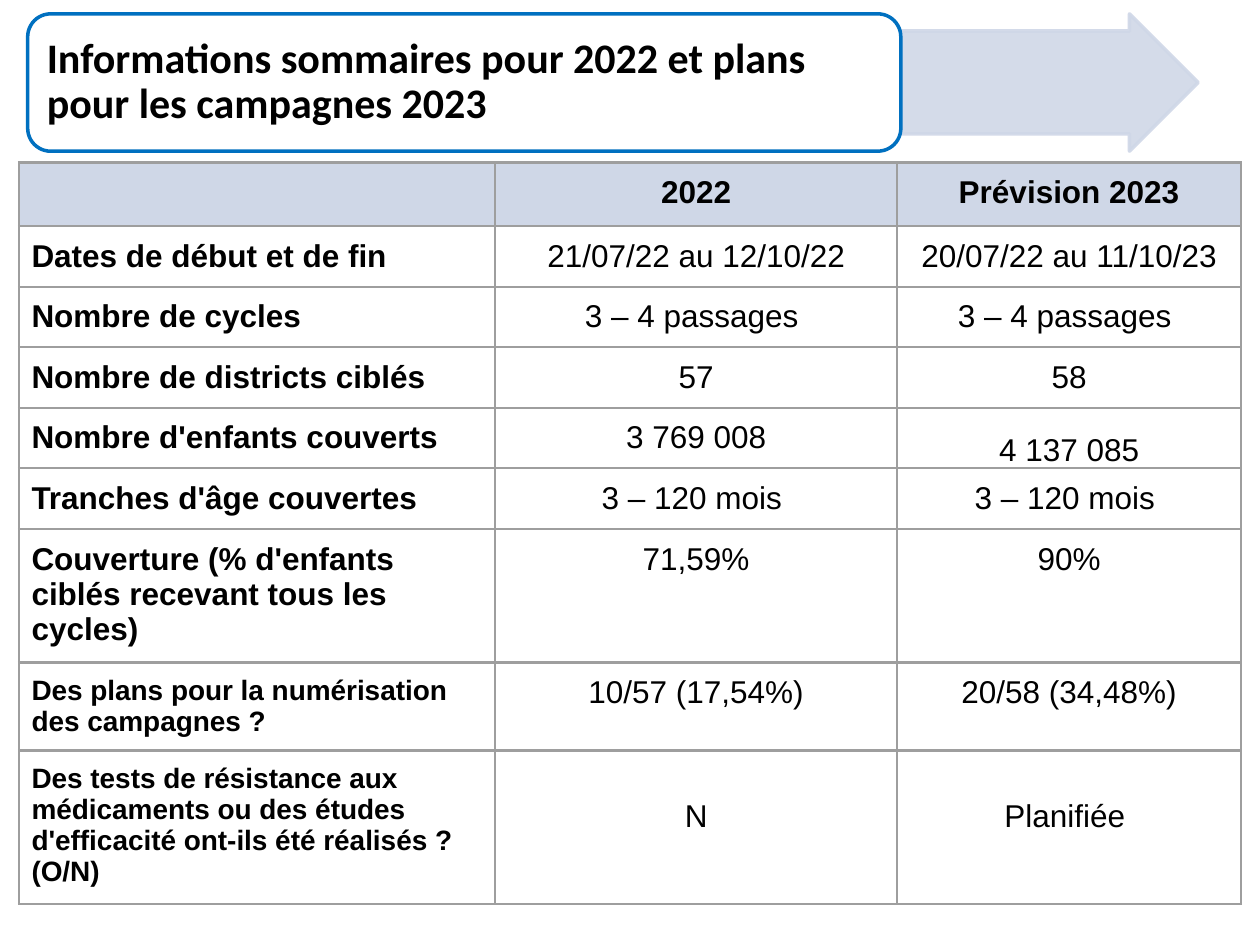
from dataclasses import dataclass
from typing import Any

from lxml import etree
from pptx import Presentation
from pptx.dml.color import RGBColor
from pptx.enum.shapes import MSO_SHAPE
from pptx.enum.text import MSO_ANCHOR, PP_ALIGN
from pptx.oxml.ns import qn
from pptx.util import Inches, Pt

ROUNDED, ARROW = MSO_SHAPE.ROUNDED_RECTANGLE, MSO_SHAPE.RIGHT_ARROW
TOP, MIDDLE, BOTTOM = MSO_ANCHOR.TOP, MSO_ANCHOR.MIDDLE, MSO_ANCHOR.BOTTOM
LEFT, CENTER = PP_ALIGN.LEFT, PP_ALIGN.CENTER


@dataclass(frozen=True)
class Theme:
    black: str = "000000"
    white: str = "FFFFFF"
    blue: str = "0070C0"
    pale: str = "CFD7E7"
    border: str = "9E9E9E"
    title_font: str = "Calibri"
    table_font: str = "Arial"
    title_size: float = 24
    table_size: float = 18
    small_size: float = 16
    outline: float = 2
    border_width: float = 1.5


THEME = Theme()


@dataclass(frozen=True)
class Banner:
    kind: Any
    left: float
    width: float
    adjustments: tuple[float, ...]
    fill: str
    line: str
    opacity: int = 100


@dataclass(frozen=True)
class Row:
    label: str
    current: str
    planned: str
    height: float = 0.48
    label_size: float = THEME.table_size
    header: bool = False
    value_top: float = 0.1
    planned_at_bottom: bool = False


BANNERS = (
    Banner(ARROW, 7.15, 2.36, (0.75, 0.5), THEME.pale, THEME.pale, 89),
    Banner(ROUNDED, 0.22, 6.93, (0.167,), THEME.white, THEME.blue),
)
TITLE = "Informations sommaires pour 2022 et plans pour les campagnes 2023"
COLUMN_WIDTHS = (3.78, 3.19, 2.73)
ROWS = (
    Row("", "2022", "Prévision 2023", header=True),
    Row("Dates de début et de fin", "21/07/22 au 12/10/22", "20/07/22 au 11/10/23"),
    Row("Nombre de cycles", "3 – 4 passages ", "3 – 4 passages "),
    Row("Nombre de districts ciblés", "57", "58"),
    Row("Nombre d'enfants couverts", "3 769 008", "4 137 085", planned_at_bottom=True),
    Row("Tranches d'âge couvertes", "3 – 120 mois ", "3 – 120 mois "),
    Row("Couverture (% d'enfants ciblés recevant tous les cycles)", "71,59%", "90%", 1.06),
    Row("Des plans pour la numérisation des campagnes ?",
        "10/57 (17,54%)", "20/58 (34,48%)", 0.7, THEME.small_size),
    Row("Des tests de résistance aux médicaments ou des études d'efficacité "
        "ont-ils été réalisés ? (O/N)",
        "N", "Planifiée ", 1.22, THEME.small_size, value_top=0.38),
)


def apply_format(target: Any, values: dict[str, Any]) -> None:
    for name, value in values.items():
        setattr(target, name, value)


def write_text(paragraph: Any, text: str, font: str, size: float, bold: bool) -> None:
    run = paragraph.add_run()
    run.text = text
    apply_format(run.font, {"name": font, "size": Pt(size), "bold": bold})
    run.font.color.rgb = RGBColor.from_string(THEME.black)


def set_margins(target: Any, left: float, top: float, right: float, bottom: float) -> None:
    apply_format(target, {
        "margin_left": Inches(left), "margin_top": Inches(top),
        "margin_right": Inches(right), "margin_bottom": Inches(bottom),
    })


def draw_banner(slide: Any, banner: Banner) -> Any:
    shape = slide.shapes.add_shape(
        banner.kind, Inches(banner.left), Inches(0.11), Inches(banner.width), Inches(1.09))
    shape.shadow.inherit = False
    for index, value in enumerate(banner.adjustments):
        shape.adjustments[index] = value
    shape.fill.solid()
    shape.fill.fore_color.rgb = RGBColor.from_string(banner.fill)
    shape.line.color.rgb = RGBColor.from_string(banner.line)
    shape.line.width = Pt(THEME.outline)
    if banner.opacity < 100:
        for color in shape.element.spPr.iter(qn("a:srgbClr")):
            etree.SubElement(color, qn("a:alpha"), val=str(banner.opacity * 1000))
    return shape


def write_title(shape: Any) -> None:
    frame = shape.text_frame
    apply_format(frame, {"word_wrap": True, "vertical_anchor": MIDDLE})
    set_margins(frame, 0.1, 0.05, 0.1, 0.05)
    paragraph = frame.paragraphs[0]
    apply_format(paragraph, {"alignment": LEFT, "line_spacing": 0.9})
    write_text(paragraph, TITLE, THEME.title_font, THEME.title_size, True)


def draw_borders(cell: Any) -> None:
    properties = cell._tc.get_or_add_tcPr()
    for position, side in enumerate(("lnL", "lnR", "lnT", "lnB")):
        line = etree.Element(qn(f"a:{side}"), w=str(Pt(THEME.border_width)))
        fill = etree.SubElement(line, qn("a:solidFill"))
        etree.SubElement(fill, qn("a:srgbClr"), val=THEME.border)
        properties.insert(position, line)


def fill_cell(cell: Any, row: Row, column: int, text: str) -> None:
    is_label = column == 0
    at_bottom = row.planned_at_bottom and column == 2
    if at_bottom:
        set_margins(cell, 0.01, 0.01, 0.01, 0)
    else:
        set_margins(cell, 0.1, 0.1 if is_label else row.value_top, 0.1, 0.1)
    cell.vertical_anchor = BOTTOM if at_bottom else TOP
    if row.header:
        cell.fill.solid()
        cell.fill.fore_color.rgb = RGBColor.from_string(THEME.pale)
    else:
        cell.fill.background()
    draw_borders(cell)
    if text:
        paragraph = cell.text_frame.paragraphs[0]
        paragraph.alignment = LEFT if is_label else CENTER
        size = row.label_size if is_label else THEME.table_size
        write_text(paragraph, text, THEME.table_font, size, row.header or is_label)


def draw_table(slide: Any) -> None:
    table = slide.shapes.add_table(
        len(ROWS), len(COLUMN_WIDTHS), Inches(0.15), Inches(1.29),
        Inches(sum(COLUMN_WIDTHS)), Inches(sum(row.height for row in ROWS))).table
    apply_format(table, {"first_row": False, "horz_banding": False})
    for column, width in zip(table.columns, COLUMN_WIDTHS):
        column.width = Inches(width)
    for row_index, row in enumerate(ROWS):
        table.rows[row_index].height = Inches(row.height)
        for column, text in enumerate((row.label, row.current, row.planned)):
            fill_cell(table.cell(row_index, column), row, column, text)


def main() -> None:
    presentation = Presentation()
    apply_format(presentation, {"slide_width": Inches(10), "slide_height": Inches(7.5)})
    slide = presentation.slides.add_slide(presentation.slide_layouts[6])
    arrow, title_box = [draw_banner(slide, banner) for banner in BANNERS]
    write_title(title_box)
    draw_table(slide)
    presentation.save("out.pptx")


if __name__ == "__main__":
    main()
